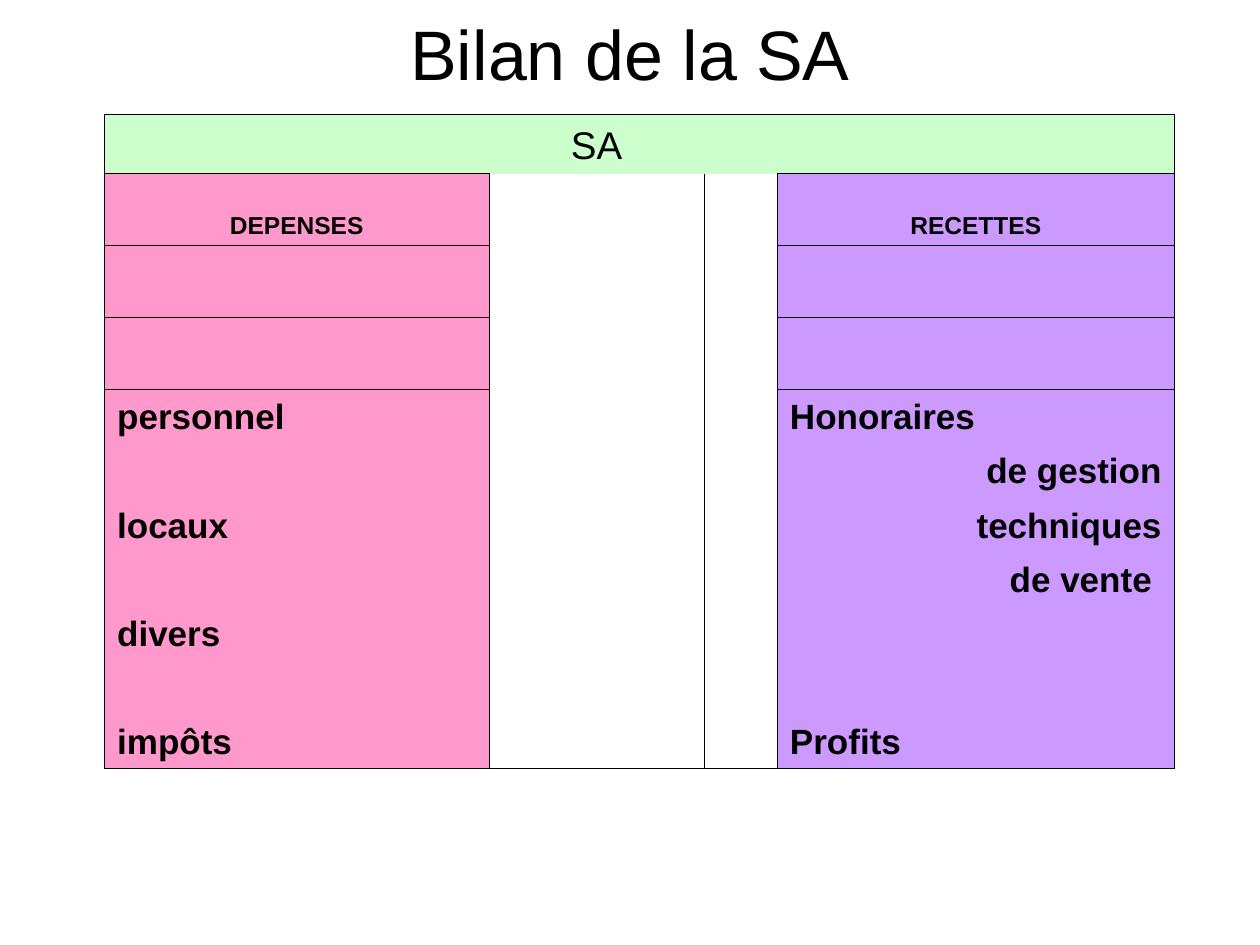
import pptx
import pptx.dml.color
import pptx.enum.text
import pptx.oxml
import pptx.oxml.ns
import pptx.util

COLORS = {"ink": "000000", "header": "CCFFCC", "expenses": "FF99CC", "income": "CC99FF"}
NO_GRID_STYLE = "{2D5ABB26-0587-4C30-8999-92F81FD0307C}"
LEFT, CENTER, RIGHT = (pptx.enum.text.PP_ALIGN.LEFT, pptx.enum.text.PP_ALIGN.CENTER,
                       pptx.enum.text.PP_ALIGN.RIGHT)
MIDDLE, BOTTOM = pptx.enum.text.MSO_ANCHOR.MIDDLE, pptx.enum.text.MSO_ANCHOR.BOTTOM


def write_text(holder, text, size=20, bold=True, align=LEFT, anchor=BOTTOM):
    """Fill a cell or a shape with one formatted paragraph."""
    holder.vertical_anchor = anchor
    para = holder.text_frame.paragraphs[0]
    para.alignment = align
    span = para.add_run()
    span.text = text
    span.font.name = "Arial"
    span.font.size = pptx.util.Pt(size)
    span.font.bold = bold
    span.font.color.rgb = pptx.dml.color.RGBColor.from_string(COLORS["ink"])


def draw_borders(cell, sides):
    """Rule the given sides, in the order L, R, T, B; call before setting the fill."""
    for side in sides:
        cell._tc.get_or_add_tcPr().append(pptx.oxml.parse_xml(
            f'<a:ln{side} {pptx.oxml.ns.nsdecls("a")} w="{pptx.util.Pt(0.45)}"><a:solidFill>'
            f'<a:srgbClr val="{COLORS["ink"]}"/></a:solidFill></a:ln{side}>'))


deck = pptx.Presentation()
deck.slide_width, deck.slide_height = pptx.util.Inches(10), pptx.util.Inches(7.5)
page = deck.slides.add_slide(deck.slide_layouts[5])

title = page.shapes.title
title.left, title.top = pptx.util.Inches(0.75), 0
title.width, title.height = pptx.util.Inches(8.5), pptx.util.Inches(0.84)
title.text_frame.auto_size = pptx.enum.text.MSO_AUTO_SIZE.NONE
title.text_frame.vertical_anchor = MIDDLE
write_text(title, "Bilan de la SA", size=40, bold=False, align=CENTER, anchor=MIDDLE)

column_widths = [3.05, 1.71, 0.58, 3.15]
row_heights = [0.47] + [0.57] * 3 + [0.43] * 7
last_row, last_column = len(row_heights) - 1, len(column_widths) - 1
subheading_end = 2

frame = page.shapes.add_table(
    len(row_heights), len(column_widths), pptx.util.Inches(0.83), pptx.util.Inches(0.91),
    pptx.util.Inches(sum(column_widths)), pptx.util.Inches(sum(row_heights)))
balance = frame.table
balance.first_row = balance.horz_banding = False
balance._tbl.tblPr.find(pptx.oxml.ns.qn("a:tableStyleId")).text = NO_GRID_STYLE
for column, width in zip(balance.columns, column_widths):
    column.width = pptx.util.Inches(width)
for row, height in zip(balance.rows, row_heights):
    row.height = pptx.util.Inches(height)

fills = {0: "expenses", last_column: "income"}
for row in range(last_row + 1):
    for column in range(last_column + 1):
        cell = balance.cell(row, column)
        outer = column in fills
        rules = {
            "L": column == 0 or (row > 0 and column != 2),
            "R": column == last_column or (row > 0 and column != 1),
            "T": row == 0 or (outer and row in (1, subheading_end + 1)),
            "B": row == last_row or (outer and row in (0, subheading_end)),
        }
        draw_borders(cell, [side for side, ruled in rules.items() if ruled])
        color = "header" if row == 0 else fills.get(column)
        if color:
            cell.fill.solid()
            cell.fill.fore_color.rgb = pptx.dml.color.RGBColor.from_string(COLORS[color])
        else:
            cell.fill.background()

write_text(balance.cell(0, 1), "SA", size=22, bold=False, align=CENTER)
for column, heading in ((0, "DEPENSES"), (last_column, "RECETTES")):
    write_text(balance.cell(1, column), heading, size=14, align=CENTER)
for step, expense in enumerate(["personnel", "locaux", "divers", "impôts"]):
    write_text(balance.cell(4 + 2 * step, 0), expense)
for row, income in ((4, "Honoraires"), (last_row, "Profits")):
    write_text(balance.cell(row, last_column), income)
for row, fee in enumerate(["de gestion", "techniques", "de vente "], start=5):
    write_text(balance.cell(row, last_column), fee, align=RIGHT)

deck.save("out.pptx")
